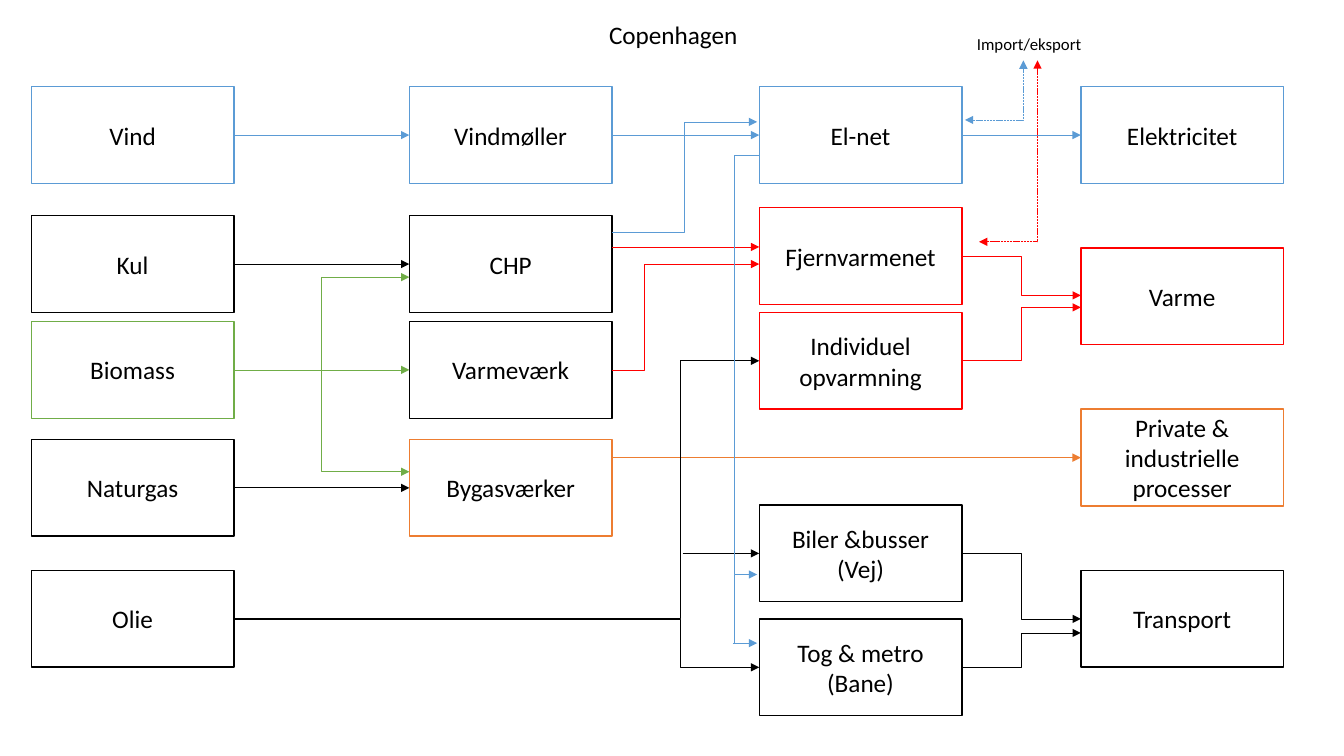
"""Build the Copenhagen energy flow slide, from sources through plants and grids to uses."""
import dataclasses

import lxml.etree
import pptx
import pptx.dml.color
import pptx.enum.dml
import pptx.enum.shapes
import pptx.enum.text
import pptx.oxml.ns
import pptx.util

Inches = pptx.util.Inches


@dataclasses.dataclass(frozen=True)
class Theme:
    font: str = "Calibri"
    black: str = "000000"
    white: str = "FFFFFF"
    blue: str = "5B9BD5"
    red: str = "FF0000"
    green: str = "70AD47"
    orange: str = "ED7D31"
    text_size: int = 18
    label_size: int = 12
    box_line: float = 1
    flow_line: float = 0.5


theme = Theme()
box_width, box_height = 2.01, 0.96
right_side, left_side = 3, 1


def write(text_frame, text, size, alignment):
    paragraph = text_frame.paragraphs[0]
    paragraph.text = text
    paragraph.alignment = alignment
    paragraph.font.name = theme.font
    paragraph.font.size = pptx.util.Pt(size)
    paragraph.font.color.rgb = pptx.dml.color.RGBColor.from_string(theme.black)


def add_flow(start, end, color, turn=None, heads=("tailEnd",), corner=False):
    """Draw a flow between box names (middle of a side) or points, turning at x = turn."""
    start_box, end_box = boxes.get(start), boxes.get(end)
    if start_box:
        start = start_box.left.inches + box_width, start_box.top.inches + box_height / 2
    if end_box:
        end = end_box.left.inches, end_box.top.inches + box_height / 2
    kinds = pptx.enum.shapes.MSO_CONNECTOR
    kind = kinds.ELBOW if turn or corner else kinds.STRAIGHT
    connector = slide.shapes.add_connector(kind, *map(Inches, start + end))
    if start_box:
        connector.begin_connect(start_box, right_side)
    if end_box:
        connector.end_connect(end_box, left_side)
    connector.line.color.rgb = pptx.dml.color.RGBColor.from_string(color)
    connector.line.width = pptx.util.Pt(theme.flow_line)
    properties = connector._element.spPr
    geometry = properties.find(pptx.oxml.ns.qn("a:prstGeom"))
    if corner:
        geometry.set("prst", "bentConnector2")
        connector.line.dash_style = pptx.enum.dml.MSO_LINE.SQUARE_DOT
    if turn:
        share = round((turn - start[0]) / (end[0] - start[0]) * 100000)
        guides = geometry.find(pptx.oxml.ns.qn("a:avLst"))
        lxml.etree.SubElement(guides, pptx.oxml.ns.qn("a:gd"), name="adj1", fmla=f"val {share}")
    for head in heads:
        lxml.etree.SubElement(connector.line._ln, pptx.oxml.ns.qn(f"a:{head}"), type="triangle")
    lxml.etree.SubElement(properties, pptx.oxml.ns.qn("a:effectLst"))


presentation = pptx.Presentation()
presentation.slide_width = Inches(13.33)
presentation.slide_height = Inches(7.5)
slide = presentation.slides.add_slide(presentation.slide_layouts.get_by_name("Title Only"))

title = slide.shapes.title
label = slide.shapes.add_textbox(Inches(9.59), Inches(0.29), Inches(1.29), Inches(0.3))
title.left, title.top, title.width, title.height = map(Inches, (5.94, 0.14, 1.49, 0.4))
for shape, text, size in (
    (title, "Copenhagen", theme.text_size),
    (label, "Import/eksport", theme.label_size),
):
    write(shape.text_frame, text, size, pptx.enum.text.PP_ALIGN.LEFT)
    shape.text_frame.word_wrap = False
    shape.text_frame.auto_size = pptx.enum.text.MSO_AUTO_SIZE.SHAPE_TO_FIT_TEXT
    shape.text_frame.vertical_anchor = pptx.enum.text.MSO_ANCHOR.TOP

columns = {
    0.31: [
        ("Vind", 0.86, theme.blue),
        ("Kul", 2.14, theme.black),
        ("Biomass", 3.19, theme.green),
        ("Naturgas", 4.36, theme.black),
        ("Olie", 5.66, theme.black),
    ],
    4.06: [
        ("Vindmøller", 0.86, theme.blue),
        ("CHP", 2.14, theme.black),
        ("Varmeværk", 3.19, theme.black),
        ("Bygasværker", 4.36, theme.orange),
    ],
    7.53: [
        ("El-net", 0.86, theme.blue),
        ("Fjernvarmenet", 2.06, theme.red),
        ("Individuel opvarmning", 3.1, theme.red),
        ("Biler &busser\n(Vej)", 5.01, theme.black),
        ("Tog & metro\n(Bane)", 6.14, theme.black),
    ],
    10.72: [
        ("Elektricitet", 0.86, theme.blue),
        ("Varme", 2.46, theme.red),
        ("Private & industrielle processer", 4.06, theme.orange),
        ("Transport", 5.66, theme.black),
    ],
}
boxes = {}
for left, column in columns.items():
    for text, top, color in column:
        box = slide.shapes.add_shape(
            pptx.enum.shapes.MSO_SHAPE.RECTANGLE, *map(Inches, (left, top, box_width, box_height))
        )
        box.shadow.inherit = False
        box.fill.solid()
        box.fill.fore_color.rgb = pptx.dml.color.RGBColor.from_string(theme.white)
        box.line.color.rgb = pptx.dml.color.RGBColor.from_string(color)
        box.line.width = pptx.util.Pt(theme.box_line)
        box.text_frame.vertical_anchor = pptx.enum.text.MSO_ANCHOR.MIDDLE
        write(box.text_frame, text, theme.text_size, pptx.enum.text.PP_ALIGN.CENTER)
        boxes[text] = box

for start, end, color in (
    ("Vind", "Vindmøller", theme.blue),
    ("Vindmøller", "El-net", theme.blue),
    ("El-net", "Elektricitet", theme.blue),
    ("Kul", "CHP", theme.black),
    ("Biomass", "Varmeværk", theme.green),
    ("Naturgas", "Bygasværker", theme.black),
    ((6.77, 5.49), "Biler &busser\n(Vej)", theme.black),
    ((6.07, 4.54), "Private & industrielle processer", theme.orange),
    ((6.07, 2.45), (7.53, 2.45), theme.red),
    ((7.27, 6.38), (7.51, 6.38), theme.blue),
):
    add_flow(start, end, color)

for start, end, color, turn in (
    ("Biomass", (4.06, 2.75), theme.green, 3.19),
    ("Biomass", (4.06, 4.68), theme.green, 3.19),
    ("Olie", "Tog & metro\n(Bane)", theme.black, 6.75),
    ("Olie", "Individuel opvarmning", theme.black, 6.75),
    ("Varmeværk", (7.53, 2.62), theme.red, 6.39),
    ("Fjernvarmenet", (10.72, 2.93), theme.red, 10.13),
    ("Individuel opvarmning", (10.72, 3.05), theme.red, 10.13),
    ("Biler &busser\n(Vej)", "Transport", theme.black, 10.13),
    ("Tog & metro\n(Bane)", (10.72, 6.28), theme.black, 10.13),
    ((7.53, 1.54), (7.51, 5.7), theme.blue, 7.28),
    ((6.07, 2.31), (7.51, 1.21), theme.blue, 6.79),
):
    add_flow(start, end, color, turn)

add_flow((7.28, 5.7), (7.28, 6.38), theme.blue, heads=())
for start, end, color in (
    ((9.57, 1.19), (10.15, 0.6), theme.blue),
    ((9.71, 2.4), (10.29, 0.6), theme.red),
):
    add_flow(start, end, color, heads=("headEnd", "tailEnd"), corner=True)

presentation.save("out.pptx")
